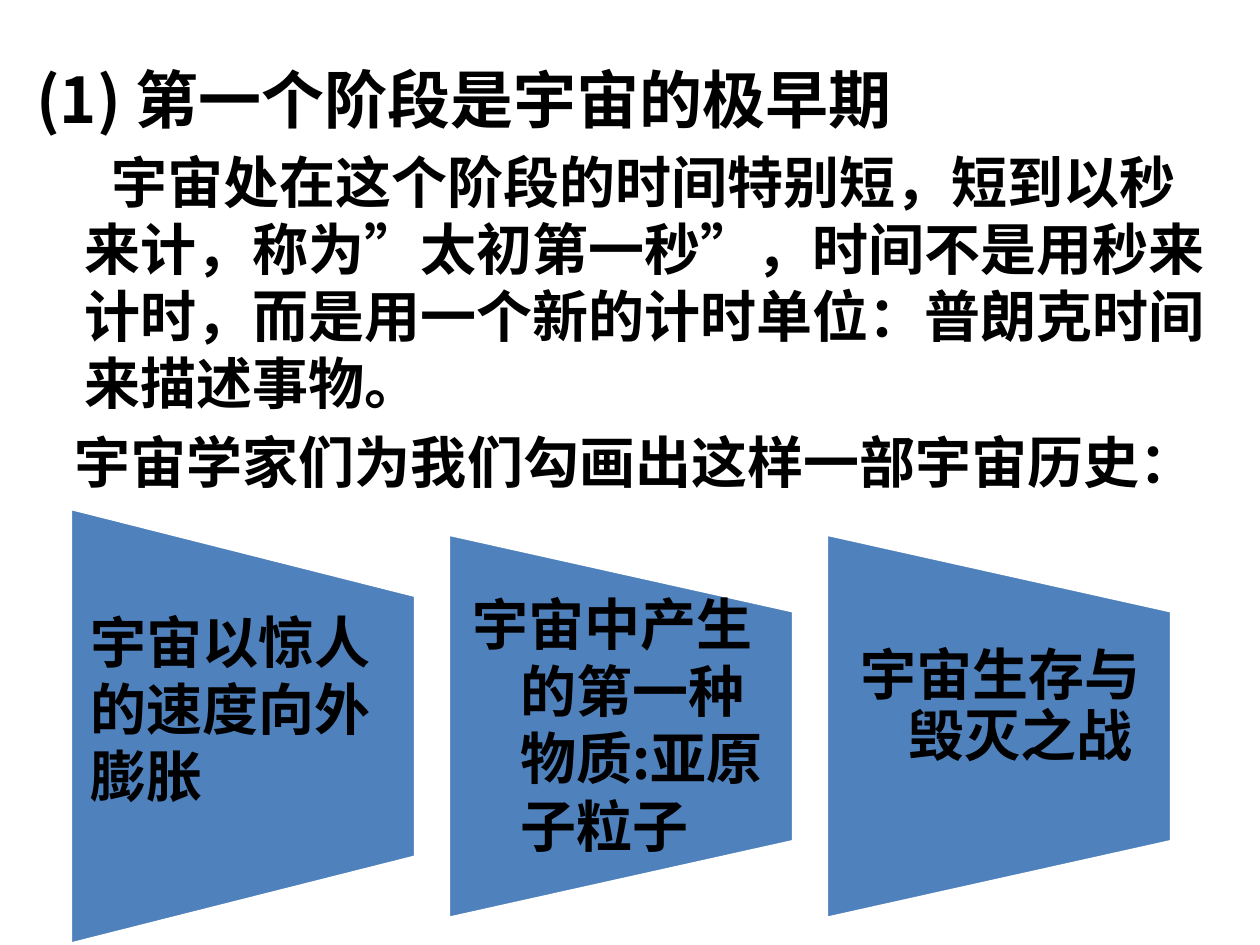
from lxml import etree
from pptx import Presentation
from pptx.dml.color import RGBColor
from pptx.enum import shapes, text
from pptx.oxml.ns import qn
from pptx.util import Cm, Pt

BLACK = RGBColor(0x00, 0x00, 0x00)
WHITE = RGBColor(0xFF, 0xFF, 0xFF)
BLUE = RGBColor(0x4F, 0x81, 0xBD)
FONT = "Noto Sans CJK SC"


def add_text(s, box, paragraphs):
    """Each paragraph is (text, size, left margin, first-line indent, space before, line spacing)."""
    tf = s.shapes.add_textbox(*(Cm(v) for v in box)).text_frame
    tf.word_wrap = True
    tf.auto_size = text.MSO_AUTO_SIZE.SHAPE_TO_FIT_TEXT
    for i, (words, size, margin, indent, before, spacing) in enumerate(paragraphs):
        p = tf.add_paragraph() if i else tf.paragraphs[0]
        r = p.add_run()
        r.text = words
        r.font.name = FONT
        r.font.size = Pt(size)
        r.font.bold = True
        r.font.color.rgb = BLACK
        etree.SubElement(r.font._element, qn("a:ea"), typeface=FONT)
        p.space_before = Pt(before)
        p.line_spacing = spacing
        pPr = p._p.get_or_add_pPr()
        pPr.set("marL", str(Cm(margin)))
        pPr.set("indent", str(Cm(indent)))


prs = Presentation()
prs.slide_width, prs.slide_height = Cm(25.4), Cm(19.05)
s = prs.slides.add_slide(prs.slide_layouts[6])

# Introduction
add_text(s, (0.48, 1.09, 24.18, 9.17), [
    ("(1) 第一个阶段是宇宙的极早期", 36, 0.97, -0.97, 7.2, 1.0),
    ("宇宙处在这个阶段的时间特别短，短到以秒来计，称为”太初第一秒”，"
     "时间不是用秒来计时，而是用一个新的计时单位：普朗克时间来描述事物。",
     32, 0.97, 0.55, 6.4, 1.0),
    ("宇宙学家们为我们勾画出这样一部宇宙历史：", 32, 0.97, -0.19, 6.4, 1.0),
])

# Three stages: trapezoids turned on their side, evenly spaced
WIDTH, CENTER_X, CENTER_Y, STEP = 6.96, 4.9, 14.64, 7.62
for i, length in enumerate((8.79, 7.75, 7.75)):
    sp = s.shapes.add_shape(
        shapes.MSO_SHAPE.FLOWCHART_MANUAL_OPERATION,
        Cm(CENTER_X + i * STEP - length / 2), Cm(CENTER_Y - WIDTH / 2),
        Cm(length), Cm(WIDTH))
    sp.rotation = 270
    sp.shadow.inherit = False
    sp.fill.solid()
    sp.fill.fore_color.rgb = BLUE
    sp.line.color.rgb = WHITE
    sp.line.width = Pt(2)

stages = [
    ((1.57, 12.12, 6.58, 4.37), ("宇宙以惊人的速度向外膨胀", 32, 0, 0, 0, 1.0)),
    ((9.27, 11.76, 6.81, 5.74), ("宇宙中产生的第一种物质:亚原子粒子", 32, 0.97, -0.97, 6.4, 1.0)),
    ((17.09, 12.93, 6.27, 2.72), ("宇宙生存与毁灭之战", 32, 0.97, -0.97, 6.4, 0.9)),
]
for box, paragraph in stages:
    add_text(s, box, [paragraph])

prs.save("out.pptx")
